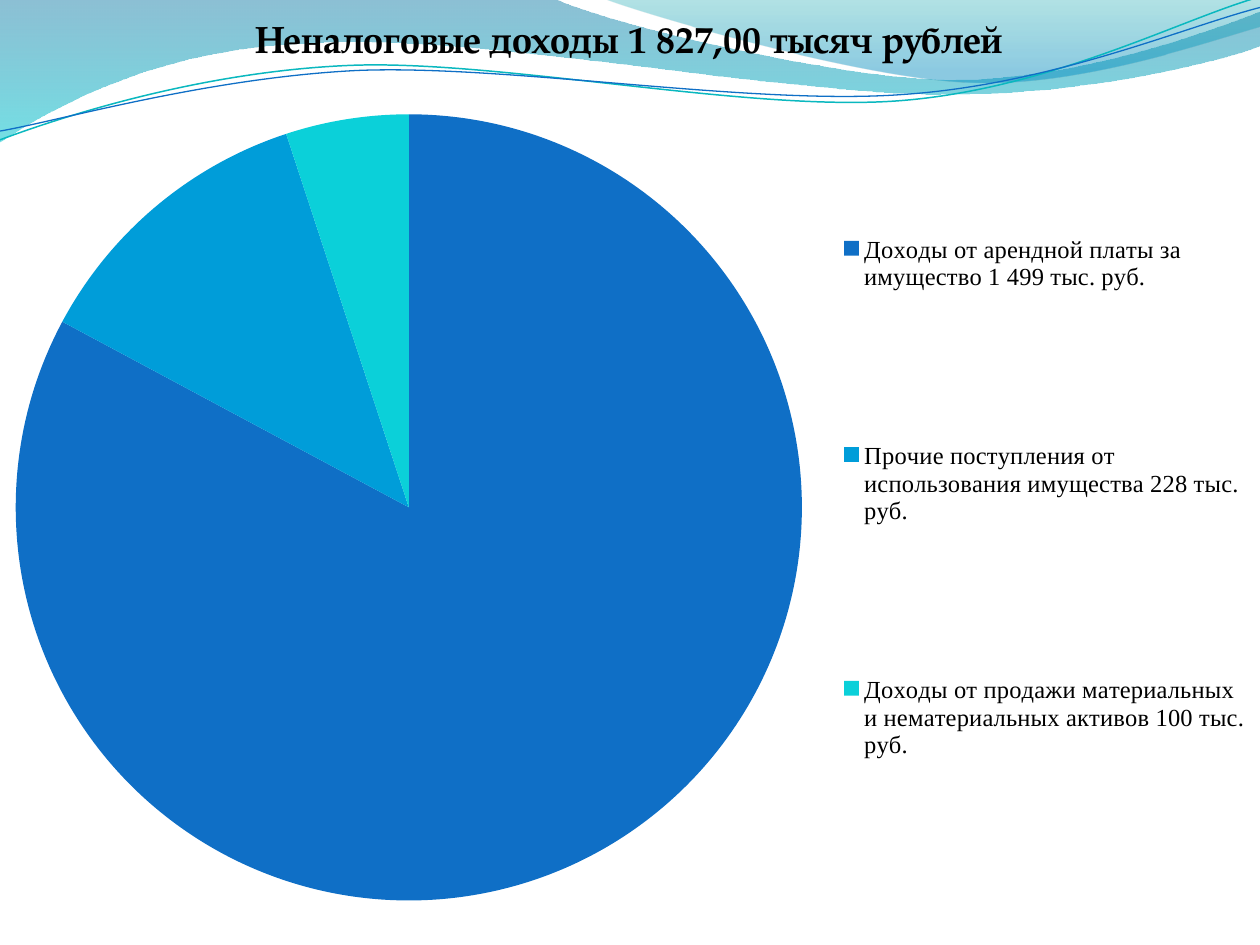
from math import cos, radians, sin

from lxml import etree
from pptx import Presentation
from pptx.chart.data import CategoryChartData
from pptx.dml.color import RGBColor
from pptx.enum.chart import XL_CHART_TYPE as ChartType, XL_LEGEND_POSITION as LegendPosition
from pptx.oxml import parse_xml
from pptx.oxml.ns import nsdecls, qn
from pptx.util import Pt

WIDTH, HEIGHT = 720, 540
BLACK = RGBColor(0x00, 0x00, 0x00)
BLUE = RGBColor(0x0F, 0x6F, 0xC6)
SKY = RGBColor(0x00, 0x9D, 0xD9)
CYAN = RGBColor(0x0B, 0xD0, 0xD9)
TEAL = RGBColor(0x0A, 0xB8, 0xBF)
DEEP_BLUE = RGBColor(0x00, 0x74, 0xA1)
TURQUOISE = RGBColor(0x00, 0xC6, 0xCF)
DARK_TEAL = RGBColor(0x00, 0xA1, 0xA9)
OCEAN = RGBColor(0x00, 0x8B, 0xBF)
TITLE_FONT, LEGEND_FONT = "TeX Gyre Pagella", "Times New Roman"

TITLE = "Неналоговые доходы 1 827,00 тысяч рублей"
INCOME = [  # category, percent, colour
    ("Доходы от арендной платы за имущество 1 499 тыс. руб.", 82, BLUE),
    ("Прочие поступления от использования имущества 228 тыс. руб.", 12, SKY),
    ("Доходы от продажи материальных и нематериальных активов 100 тыс. руб.", 5, CYAN),
]
# Places of the chart parts, in percent of the chart
TITLE_LAYOUT = {"x": 19.7, "y": 1.5}
PLOT_LAYOUT = {"x": 1.25, "y": 12.1, "w": 62.4, "h": 83.2}
LEGEND_LAYOUT = {"x": 66.95, "y": 9, "w": 32.2, "h": 87.3}

# A step of two numbers is a straight line, a step of six a Bezier curve.
WAVES = [  # steps, gradient stops (position %, colour, opacity %)
    ([(0, 0), (316.8, -0.7),
      (342.7, 12.2, 478.1, 45.4, 545.8, 45.4), (614.2, 45.4, 689.8, 18.7, 720, 6.5),
      (720.7, 25.9), (707.8, 31.7, 626.4, 54.7, 537.1, 54),
      (447.8, 54, 275, 20.2, 185, 24.5), (92.9, 25.9, 33.1, 59.8, -0.7, 81.4), (0, 0)],
     [(0, DEEP_BLUE, 45), (100, TURQUOISE, 55)]),
    ([(344.9, -0.7), (366.5, 7.9, 491, 44.6, 553.7, 46.8),
      (616.3, 49.7, 691.9, 23, 720, 15.1), (720, 0), (344.9, -0.7)],
     [(0, DARK_TEAL, 30), (80, OCEAN, 45)]),
]
STRANDS = [  # steps, centre, colour, line width
    ([(0, 79.9), (34.6, 67, 113.8, 41, 199.4, 37.4),
      (284.4, 33.8, 427, 64.1, 513.4, 57.6), (599.8, 51.1, 675.4, 10.8, 718.6, -1.4)],
     (359.3, 41.4), TEAL, 0.85),
    ([(0, 74.9), (33.8, 69.1, 118.1, 44.6, 203.8, 40.3),
      (290.2, 36.7, 429.8, 60.5, 516.2, 54), (601.9, 48.2, 677.5, 15.1, 720, 4.3)],
     (359.6, 42.5), BLUE, 0.75),
]
STRAND_TILT = -2.7


def turn(point, centre, degrees):
    angle = radians(degrees)
    x, y = point[0] - centre[0], point[1] - centre[1]
    return (centre[0] + x * cos(angle) - y * sin(angle),
            centre[1] + x * sin(angle) + y * cos(angle))


def draw_outline(shapes, steps, close, centre=(0, 0), tilt=0):
    """Draw lines and curves; a tilted shape is stored upright and rotated."""
    points = []
    for step in steps:
        for pair in zip(step[::2], step[1::2]):
            x, y = turn(pair, centre, -tilt)
            points.append((Pt(x), Pt(y)))
    builder = shapes.build_freeform(*points[0])
    builder.add_line_segments(points[1:], close=close)
    shape = builder.convert_to_shape()
    shape.shadow.inherit = False
    shape.rotation = tilt

    lines = iter(shape.element.findall(".//" + qn("a:lnTo")))
    for step in steps[1:]:
        corners = [next(lines) for _ in range(len(step) // 2)]
        if len(corners) == 3:
            curve = etree.Element(qn("a:cubicBezTo"))
            corners[0].addprevious(curve)
            for corner in corners:
                curve.append(corner[0])
                corner.getparent().remove(corner)
    return shape


def fill_gradient(shape, stops):
    """Fill from top to bottom with partly transparent colours."""
    marks = "".join(
        f'<a:gs pos="{position * 1000}"><a:srgbClr val="{colour}">'
        f'<a:alpha val="{opacity * 1000}"/></a:srgbClr></a:gs>'
        for position, colour, opacity in stops)
    shape.fill.background()
    empty = shape.element.spPr.find(qn("a:noFill"))
    empty.getparent().replace(empty, parse_xml(
        f'<a:gradFill {nsdecls("a")}><a:gsLst>{marks}</a:gsLst>'
        '<a:lin ang="5400000" scaled="0"/></a:gradFill>'))


def set_layout(element, percents, before=None, inner=False):
    """Give a chart part a fixed place, after the child named in before."""
    for old in element.findall(qn("c:layout")):
        element.remove(old)
    layout = etree.Element(qn("c:layout"))
    manual = etree.SubElement(layout, qn("c:manualLayout"))
    values = {"layoutTarget": "inner"} if inner else {}
    values.update(xMode="edge", yMode="edge")
    values.update((name, round(value / 100, 4)) for name, value in percents.items())
    for name, value in values.items():
        etree.SubElement(manual, qn(f"c:{name}")).set("val", str(value))
    if before:
        element.find(qn(before)).addnext(layout)
    else:
        element.insert(0, layout)


def style_font(font, **values):
    for name, value in values.items():
        setattr(font, name, value)
    font.color.rgb = BLACK


def add_income_chart(page):
    data = CategoryChartData()
    data.categories = [name for name, _, _ in INCOME]
    data.add_series("Series 1", [value for _, value, _ in INCOME])
    chart = page.shapes.add_chart(
        ChartType.PIE, 0, 0, Pt(WIDTH), Pt(HEIGHT), data).chart
    style_font(chart.font, name=TITLE_FONT, size=Pt(18))

    chart.has_title = True
    chart.chart_title.include_in_layout = False
    span = chart.chart_title.text_frame.paragraphs[0].add_run()
    span.text = TITLE
    style_font(span.font, name=TITLE_FONT, size=Pt(21.6), bold=True)

    chart.has_legend = True
    legend = chart.legend
    legend.position = LegendPosition.RIGHT
    legend.include_in_layout = False
    style_font(legend.font, name=LEGEND_FONT, size=Pt(14))

    pie = chart.plots[0]
    pie.vary_by_categories = True
    for index, (_, _, colour) in enumerate(INCOME):
        slice_format = pie.series[0].points[index].format
        slice_format.fill.solid()
        slice_format.fill.fore_color.rgb = colour
        slice_format.line.fill.background()

    body = chart.element.find(qn("c:chart"))
    set_layout(body.find(qn("c:title")), TITLE_LAYOUT, before="c:tx")
    set_layout(body.find(qn("c:plotArea")), PLOT_LAYOUT, inner=True)
    set_layout(body.find(qn("c:legend")), LEGEND_LAYOUT, before="c:legendPos")


def main():
    deck = Presentation()
    deck.slide_width, deck.slide_height = Pt(WIDTH), Pt(HEIGHT)
    page = deck.slides.add_slide(deck.slide_layouts[6])
    for steps, stops in WAVES:
        wave = draw_outline(page.shapes, steps, close=True)
        fill_gradient(wave, stops)
        wave.line.fill.background()
    strands = page.shapes.add_group_shape().shapes
    for steps, centre, colour, width in STRANDS:
        strand = draw_outline(strands, steps, False, centre, STRAND_TILT)
        strand.fill.background()
        strand.line.color.rgb = colour
        strand.line.width = Pt(width)
    add_income_chart(page)
    deck.save("out.pptx")


if __name__ == "__main__":
    main()
